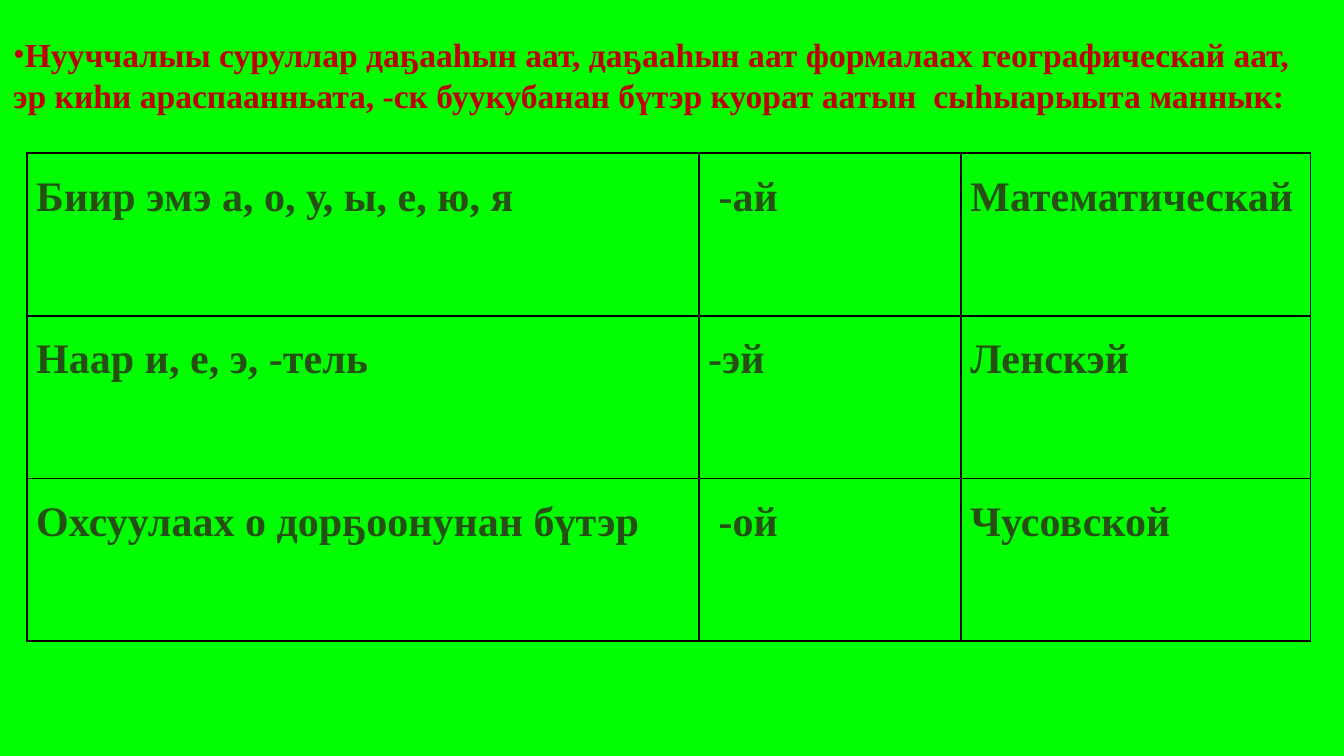
from lxml.etree import SubElement
from pptx import Presentation
from pptx.dml.color import RGBColor
from pptx.enum.text import MSO_ANCHOR, MSO_AUTO_SIZE, PP_ALIGN
from pptx.oxml.ns import qn
from pptx.util import Inches, Pt

GREEN = RGBColor(0x00, 0xFF, 0x00)
RED = RGBColor(0xC0, 0x00, 0x00)
DARK = RGBColor(0x27, 0x4E, 0x13)
BLACK = RGBColor(0x00, 0x00, 0x00)

RULE = [
    "Нууччалыы суруллар даҕааһын аат, даҕааһын аат формалаах географическай аат,",
    "эр киһи араспаанньата, -ск буукубанан бүтэр куорат аатын  сыһыарыыта маннык:",
]
ROWS = [
    ["Биир эмэ а, о, у, ы, е, ю, я", " -ай", "Математическай"],
    ["Наар и, е, э, -тель", "-эй", "Ленскэй"],
    ["Охсуулаах о дорҕоонунан бүтэр", " -ой", "Чусовской"],
]
WIDTHS = [5, 1.95, 2.6]
ROW_H = 1.21


class Board:
    font = "Times New Roman"

    def __init__(self, slide):
        self.slide = slide
        fill = slide.background.fill
        fill.solid()
        fill.fore_color.rgb = GREEN

    def style(self, para, size, color):
        for run in para.runs:
            run.font.name = self.font
            run.font.size = Pt(size)
            run.font.bold = True
            run.font.color.rgb = color

    def rule(self, lines, left, top, width, height):
        """Add the heading, with a bullet on its first line."""
        box = self.slide.shapes.add_textbox(
            Inches(left), Inches(top), Inches(width), Inches(height))
        frame = box.text_frame
        frame.word_wrap = True
        frame.auto_size = MSO_AUTO_SIZE.SHAPE_TO_FIT_TEXT
        frame.vertical_anchor = MSO_ANCHOR.MIDDLE
        frame.text = "\n".join(lines)
        for para in frame.paragraphs:
            self.style(para, 18, RED)
        props = frame.paragraphs[0]._p.get_or_add_pPr()
        SubElement(props, qn("a:buFont"), typeface=self.font)
        SubElement(props, qn("a:buChar"), char="•")

    def border(self, cell):
        props = cell._tc.get_or_add_tcPr()
        for side in ("lnL", "lnR", "lnT", "lnB"):
            line = SubElement(props, qn(f"a:{side}"), w=str(Pt(1)))
            fill = SubElement(line, qn("a:solidFill"))
            SubElement(fill, qn("a:srgbClr"), val=str(BLACK))

    def cell(self, cell, text):
        self.border(cell)
        cell.fill.background()
        cell.margin_left = cell.margin_right = Inches(0.07)
        cell.margin_top = cell.margin_bottom = Inches(0.1)
        cell.text_frame.text = text
        para = cell.text_frame.paragraphs[0]
        para.alignment = PP_ALIGN.JUSTIFY
        para.line_spacing = 1.15
        para.space_before = para.space_after = Pt(12)
        self.style(para, 22.5, DARK)

    def table(self, rows, left, top):
        table = self.slide.shapes.add_table(
            len(rows), len(WIDTHS), Inches(left), Inches(top),
            Inches(sum(WIDTHS)), Inches(ROW_H * len(rows))).table
        table.first_row = table.horz_banding = False
        for col, width in zip(table.columns, WIDTHS):
            col.width = Inches(width)
        for row, texts in zip(table.rows, rows):
            row.height = Inches(ROW_H)
            for cell, text in zip(row.cells, texts):
                self.cell(cell, text)


def main():
    deck = Presentation()
    deck.slide_width = Inches(10)
    deck.slide_height = deck.slide_width * 9 // 16
    board = Board(deck.slides.add_slide(deck.slide_layouts[6]))
    board.table(ROWS, 0.2, 1.14)
    board.rule(RULE, 0, 0.2, 9.94, 0.71)
    deck.save("out.pptx")


if __name__ == "__main__":
    main()
